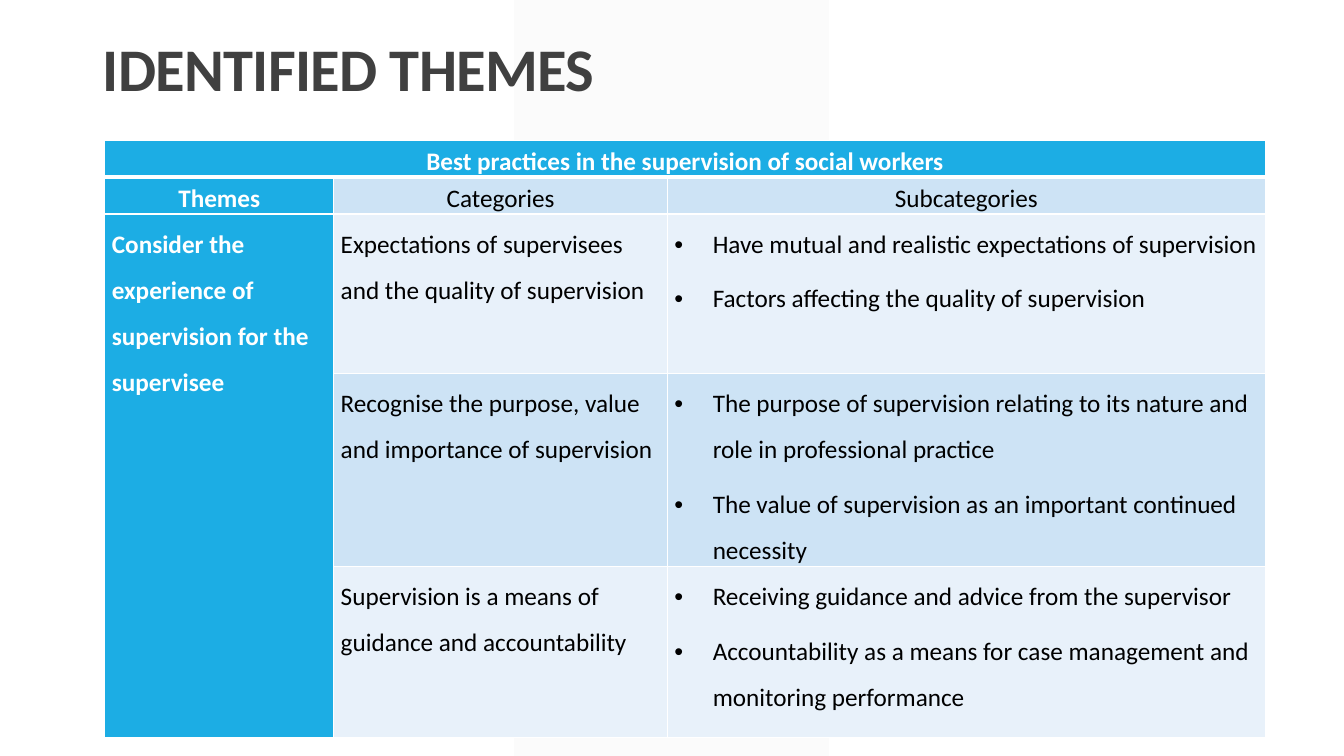
from lxml import etree
from pptx import Presentation
from pptx.dml.color import RGBColor
from pptx.enum import shapes, text
from pptx.oxml import ns
from pptx.util import Inches, Pt

COLORS = {
    "white": "FFFFFF", "black": "000000", "title": "404040", "accent": "1CADE4",
    "light": "E8F1FA", "medium": "CDE3F5", "band": "F2F2F2",
}
FONT = "Calibri"
COLUMN_WIDTHS = [2.27, 3.31, 5.93]
ROW_HEIGHTS = [0.33, 0.33, 1.58, 1.7, 1.7]
HEADINGS = ["Themes", "Categories", "Subcategories"]
THEME = "Consider the experience of supervision for the supervisee"
CATEGORIES = [
    ("Expectations of supervisees and the quality of supervision",
     ["Have mutual and realistic expectations of supervision",
      "Factors affecting the quality of supervision"]),
    ("Recognise the purpose, value and importance of supervision",
     ["The purpose of supervision relating to its nature and role in professional practice",
      "The value of supervision as an important continued necessity"]),
    ("Supervision is a means of guidance and accountability",
     ["Receiving guidance and advice from the supervisor",
      "Accountability as a means for case management and monitoring performance"]),
]


def color(name):
    return RGBColor.from_string(COLORS[name])


def add_span(para, words, size, shade, bold):
    span = para.add_run()
    span.text = words
    span.font.name, span.font.size, span.font.bold = FONT, Pt(size), bold
    span.font.color.rgb = color(shade)
    return span


def add_child(parent, tag, **attributes):
    return etree.SubElement(parent, ns.qn(tag), attributes)


def add_bullet(para):
    properties = para._p.get_or_add_pPr()
    properties.set("marL", str(Inches(0.38)))
    properties.set("indent", str(-Inches(0.38)))
    add_child(properties, "a:buFont", typeface="Arial")
    add_child(properties, "a:buChar", char="•")


def add_borders(cell, top=1, bottom=1):
    properties = cell._tc.get_or_add_tcPr()
    for side, width in {"L": 1, "R": 1, "T": top, "B": bottom}.items():
        line = add_child(properties, f"a:ln{side}", w=str(Pt(width)))
        fill = add_child(line, "a:solidFill")
        add_child(fill, "a:srgbClr", val=COLORS["white"])


def fill_cell(cell, lines, fill, header=False, bullets=False, top=1, bottom=1):
    add_borders(cell, top, bottom)
    cell.fill.solid()
    cell.fill.fore_color.rgb = color(fill)
    cell.margin_left = cell.margin_right = Inches(0.07)
    cell.margin_top = cell.margin_bottom = 0
    on_accent = fill == "accent"
    for index, words in enumerate(lines):
        para = cell.text_frame.add_paragraph() if index else cell.text_frame.paragraphs[0]
        para.alignment = text.PP_ALIGN.CENTER if header else text.PP_ALIGN.LEFT
        para.line_spacing = 1.2 if header else 1.5
        para.space_before = para.space_after = Pt(3)
        if bullets:
            add_bullet(para)
        add_span(para, words, 18, "white" if on_accent else "black", on_accent)


def add_band(page):
    band = page.shapes.add_shape(shapes.MSO_SHAPE.PARALLELOGRAM,
                                 Inches(5.1), 0, Inches(3.12), Inches(7.5))
    band.adjustments[0] = 0
    band.shadow.inherit = False
    band.fill.solid()
    band.fill.fore_color.rgb = color("band")
    band.line.fill.background()
    shade = band.element.spPr.find(ns.qn("a:solidFill"))[0]
    add_child(shade, "a:alpha", val="30000")
    page.shapes.title.element.addprevious(band.element)  # send behind the title


def add_title(page, words):
    title = page.shapes.title
    title.left, title.top = Inches(0.92), Inches(0.4)
    title.width, title.height = Inches(11.5), Inches(1.28)
    frame = title.text_frame
    frame.vertical_anchor = text.MSO_ANCHOR.TOP
    frame.auto_size = text.MSO_AUTO_SIZE.NONE
    para = frame.paragraphs[0]
    para.alignment = text.PP_ALIGN.LEFT
    para.line_spacing = 0.8
    span = add_span(para, words, 43.2, "title", True)
    span.font._element.set("spc", "-50")


def add_themes_table(page):
    table = page.shapes.add_table(
        len(ROW_HEIGHTS), len(COLUMN_WIDTHS), Inches(1.04), Inches(1.39),
        Inches(sum(COLUMN_WIDTHS)), Inches(sum(ROW_HEIGHTS))).table
    for column, width in zip(table.columns, COLUMN_WIDTHS):
        column.width = Inches(width)
    for row, height in zip(table.rows, ROW_HEIGHTS):
        row.height = Inches(height)

    # Header rows
    table.cell(0, 0).merge(table.cell(0, 2))
    fill_cell(table.cell(0, 0), ["Best practices in the supervision of social workers"],
              "accent", header=True, bottom=3)
    for index, heading in enumerate(HEADINGS):
        fill_cell(table.cell(1, index), [heading], "medium" if index else "accent",
                  header=True, top=3)

    # Theme and its categories
    table.cell(2, 0).merge(table.cell(4, 0))
    fill_cell(table.cell(2, 0), [THEME], "accent")
    for index, (category, subcategories) in enumerate(CATEGORIES):
        shade = "medium" if index % 2 else "light"
        fill_cell(table.cell(index + 2, 1), [category], shade)
        fill_cell(table.cell(index + 2, 2), subcategories, shade, bullets=True)


def main():
    deck = Presentation()
    deck.slide_width, deck.slide_height = Inches(13.33), Inches(7.5)
    page = deck.slides.add_slide(deck.slide_layouts[5])
    add_band(page)
    add_title(page, "IDENTIFIED THEMES")
    add_themes_table(page)
    deck.save("out.pptx")


if __name__ == "__main__":
    main()
